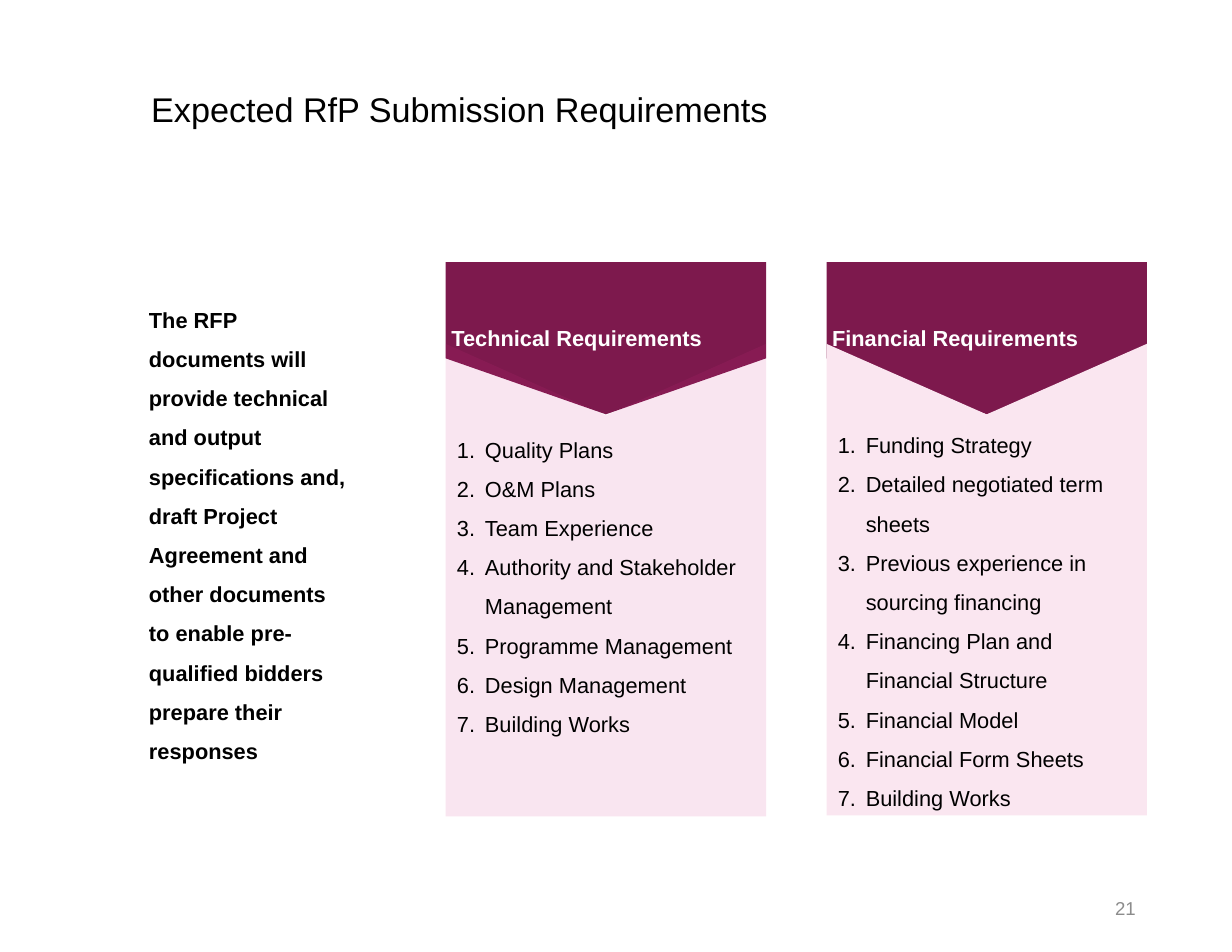
from lxml.etree import SubElement
from pptx import Presentation
from pptx.dml.color import RGBColor
from pptx.enum.text import MSO_ANCHOR, MSO_AUTO_SIZE, PP_ALIGN
from pptx.oxml.ns import qn
from pptx.util import Inches, Pt

# Theme: colours, type sizes and font
theme = {
    "font": "Arial",
    "title": Pt(22), "text": Pt(14), "page": Pt(12),
    "ink": RGBColor.from_string("000000"),
    "grey": RGBColor.from_string("8C8C8C"),
    "white": RGBColor.from_string("FFFFFF"),
    "plum": RGBColor.from_string("7D194D"),
    "pink": RGBColor.from_string("D52F86"),
    "pale": RGBColor.from_string("FAE6F0"),
}


def write(shape, lines, size, ink, frame, para, bold=False, number=False):
    """Fill a shape with formatted paragraphs."""
    tf = shape.text_frame
    form = {"word_wrap": True, "auto_size": MSO_AUTO_SIZE.NONE} | frame
    for key, value in form.items():
        setattr(tf, key, value)
    for i, line in enumerate(lines):
        p = tf.paragraphs[0] if i == 0 else tf.add_paragraph()
        form = {"alignment": PP_ALIGN.LEFT, "space_before": Pt(0)} | para
        for key, value in form.items():
            setattr(p, key, value)
        if number:
            props = p._p.get_or_add_pPr()
            props.set("marL", str(Inches(0.25)))
            props.set("indent", str(-Inches(0.25)))
            SubElement(props, qn("a:buAutoNum"), type="arabicPeriod")
        run = p.add_run()
        run.text = line
        form = {"name": theme["font"], "size": theme[size], "bold": bold}
        for key, value in form.items():
            setattr(run.font, key, value)
        run.font.color.rgb = theme[ink]


def draw(points, fill, alpha=None):
    """Draw a closed, borderless outline through points in inches."""
    dots = [(Inches(x), Inches(y)) for x, y in points]
    pen = slide.shapes.build_freeform(*dots[0])
    pen.add_line_segments(dots[1:], close=True)
    shape = pen.convert_to_shape()
    shape.shadow.inherit = False
    shape.line.fill.background()
    shape.fill.solid()
    shape.fill.fore_color.rgb = theme[fill]
    if alpha:
        tint = shape._element.spPr.find(".//" + qn("a:srgbClr"))
        SubElement(tint, qn("a:alpha"), val=str(alpha * 1000))
    return shape


deck = Presentation()
deck.slide_width, deck.slide_height = Inches(11), Inches(8.5)
slide = deck.slides.add_slide(deck.slide_layouts[3])
title, *lists = slide.placeholders

# Title
title.left, title.top = Inches(1.25), Inches(0.78)
title.width, title.height = Inches(9), Inches(0.77)
write(title, ["Expected RfP Submission Requirements"], "title", "ink",
      {"vertical_anchor": MSO_ANCHOR.TOP}, {"line_spacing": 0.9})

# Page number
page = slide.shapes.add_textbox(
    Inches(7.77), Inches(7.88), Inches(2.47), Inches(0.45))
write(page, ["21"], "page", "grey", {"vertical_anchor": MSO_ANCHOR.MIDDLE},
      {"alignment": PP_ALIGN.RIGHT})

# Introduction
sides = ["margin_left", "margin_top", "margin_right", "margin_bottom"]
intro = slide.shapes.add_textbox(
    Inches(1.25), Inches(2.73), Inches(1.95), Inches(3.98))
write(intro, ["The RFP documents will provide technical and output "
              "specifications and, draft Project Agreement and other "
              "documents to enable pre-qualified bidders prepare their "
              "responses"], "text", "ink",
      {"vertical_anchor": MSO_ANCHOR.MIDDLE}
      | dict.fromkeys(sides, Inches(0.08)),
      {"line_spacing": 1.5, "space_after": Pt(2)}, bold=True)

# Columns: heading, left, panel notch, panel foot, fill, alpha,
# list top, list height, items
wide = 2.86
cols = [
    ("Technical Requirements", 3.98, 3.71, 7.29, "pink", 12, 3.73, 2.89,
     ["Quality Plans", "O&M Plans", "Team Experience",
      "Authority and Stakeholder Management", "Programme Management",
      "Design Management", "Building Works"]),
    ("Financial Requirements", 7.38, 3.7, 7.28, "pale", None, 3.69, 3.59,
     ["Funding Strategy", "Detailed negotiated term sheets",
      "Previous experience in sourcing financing",
      "Financing Plan and Financial Structure", "Financial Model",
      "Financial Form Sheets", "Building Works"]),
]
for body, col in zip(lists, cols):
    name, left, notch, foot, fill, alpha, top, high, items = col
    mid, right = left + wide / 2, left + wide

    # Arrow header
    head = draw([(left, 2.34), (left, 3.2), (mid, 3.7), (right, 3.2),
                 (right, 2.34)], "plum")
    write(head, [name], "text", "white",
          {"vertical_anchor": MSO_ANCHOR.MIDDLE}
          | dict.fromkeys(sides, Inches(0.05)),
          {"space_after": Pt(3.4)}, bold=True)

    # Notched panel
    draw([(left, 3.07), (left, foot), (right, foot), (right, 3.07),
          (mid, notch)], fill, alpha)

    # Numbered list, brought in front of its panel
    body.left, body.top = Inches(left), Inches(top)
    body.width, body.height = Inches(wide), Inches(high)
    write(body, items, "text", "ink", {"vertical_anchor": MSO_ANCHOR.TOP},
          {"line_spacing": 1.5}, number=True)
    slide.shapes._spTree.append(body._element)

deck.save("out.pptx")
